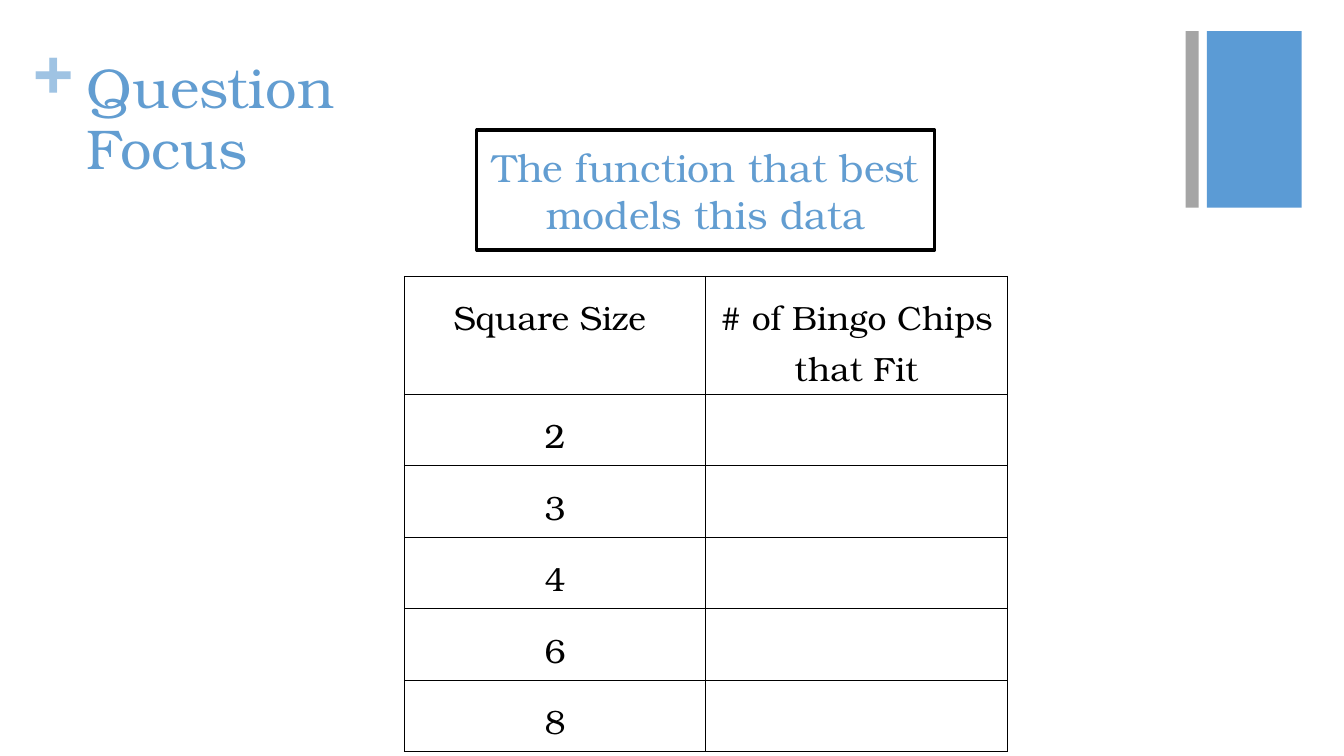
"""Build the Question Focus slide with its bingo chip table."""
import pptx
import pptx.dml.color
import pptx.enum.shapes
import pptx.enum.text
import pptx.oxml
import pptx.oxml.ns
import pptx.util

Inches, Pt = pptx.util.Inches, pptx.util.Pt
ALIGN, ANCHOR = pptx.enum.text.PP_ALIGN, pptx.enum.text.MSO_ANCHOR
RECT = pptx.enum.shapes.MSO_SHAPE.RECTANGLE
PAD, COL_W, HEAD_H, ROW_H = 0.13, 2.99, 1.17, 0.71


def color(value):
    return pptx.dml.color.RGBColor.from_string(value)


def write(tf, text, size, ink, align=ALIGN.LEFT, spacing=1.0, bold=False):
    p = tf.paragraphs[0]
    p.alignment, p.line_spacing = align, spacing
    r = p.add_run()
    r.text = text
    for name, value in {"name": "TeX Gyre Bonum", "size": Pt(size), "bold": bold}.items():
        setattr(r.font, name, value)
    r.font.color.rgb = color(ink)


prs = pptx.Presentation()
prs.slide_width, prs.slide_height = Inches(13.33), Inches(7.5)
s = prs.slides.add_slide(prs.slide_layouts[6])

for left, width, fill in [(11.97, 0.94, "5B9BD5"), (11.76, 0.13, "A5A5A5")]:
    sp = s.shapes.add_shape(RECT, Inches(left), Inches(0.31), Inches(width), Inches(1.75))
    sp.shadow.inherit = False
    sp.fill.solid()
    sp.fill.fore_color.rgb = color(fill)
    sp.line.fill.background()

for box, pad_x, pad_y, text, size, ink, spacing, bold in [
    ((0.33, 0.25, 0.38, 0.61), 0, 0, "+", 48, "9FC3E3", 1.0, True),
    ((0.73, 0.53, 4.3, 0.92), PAD, 0.07, "Question Focus", 40, "629DD1", 0.9, False),
]:
    tf = s.shapes.add_textbox(*map(Inches, box)).text_frame
    for name, value in {"word_wrap": True, "vertical_anchor": ANCHOR.TOP,
                        "margin_left": Inches(pad_x), "margin_right": Inches(pad_x),
                        "margin_top": Inches(pad_y), "margin_bottom": Inches(pad_y)}.items():
        setattr(tf, name, value)
    write(tf, text, size, ink, spacing=spacing, bold=bold)

rows = [("Square Size ", "# of Bingo Chips that Fit")] + [(n, "") for n in "23468"]
table = s.shapes.add_table(len(rows), 2, Inches(4.01), Inches(2.74), Inches(2 * COL_W),
                           Inches(HEAD_H + ROW_H * (len(rows) - 1))).table
table.first_row = table.horz_banding = False
for col in table.columns:
    col.width = Inches(COL_W)

margins = dict.fromkeys(("margin_left", "margin_right", "margin_top", "margin_bottom"), Inches(PAD))
for i, row in enumerate(rows):
    table.rows[i].height = Inches(ROW_H if i else HEAD_H)
    for j, text in enumerate(row):
        cell = table.cell(i, j)
        for name, value in margins.items():
            setattr(cell, name, value)
        tcPr = cell._tc.get_or_add_tcPr()
        for side in ("lnL", "lnR", "lnT", "lnB"):
            tcPr.append(pptx.oxml.parse_xml(
                f'<a:{side} {pptx.oxml.ns.nsdecls("a")} w="9525"><a:solidFill>'
                f'<a:srgbClr val="000000"/></a:solidFill></a:{side}>'))
        cell.fill.background()
        if text:
            write(cell.text_frame, text, 24, "000000", ALIGN.CENTER, 1.12)

sp = s.shapes.add_shape(RECT, Inches(4.73), Inches(1.29), Inches(4.54), Inches(1.19))
sp.shadow.inherit = False
sp.fill.solid()
sp.fill.fore_color.rgb = color("FFFFFF")
sp.line.color.rgb = color("000000")
sp.line.width = Pt(2.25)
tf = sp.text_frame
for name, value in {**margins, "word_wrap": True, "vertical_anchor": ANCHOR.MIDDLE}.items():
    setattr(tf, name, value)
write(tf, "The function that best models this data", 28, "629DD1", ALIGN.CENTER)

prs.save("out.pptx")
